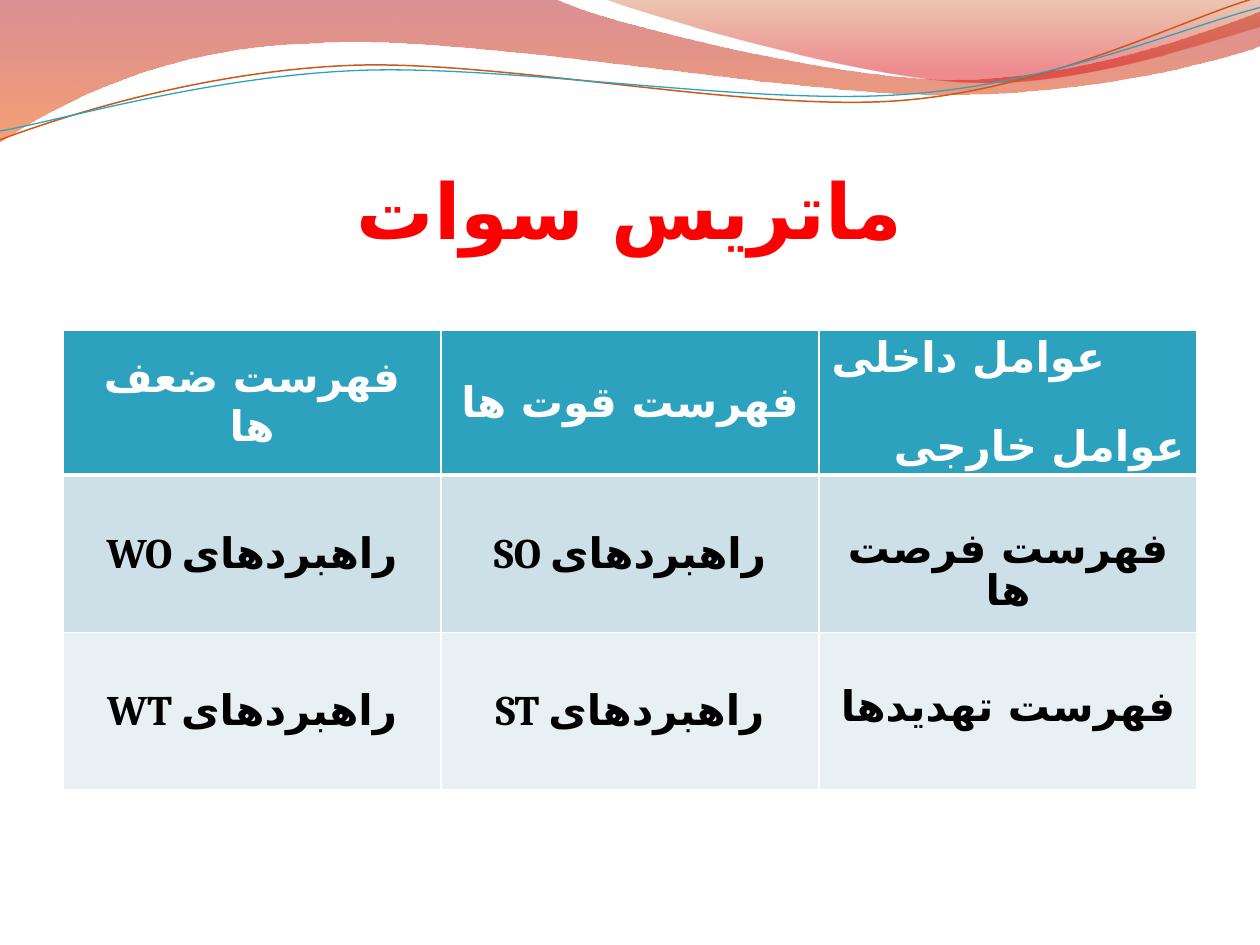
from lxml.etree import SubElement
from pptx import Presentation
from pptx.dml.color import RGBColor
from pptx.enum.text import MSO_ANCHOR, PP_ALIGN
from pptx.oxml import parse_xml
from pptx.oxml.ns import nsdecls, qn
from pptx.util import Inches, Pt

LEFT, MID, RIGHT = PP_ALIGN.LEFT, PP_ALIGN.CENTER, PP_ALIGN.RIGHT
WHITE, BLACK, RED, TEAL = "FFFFFF", "000000", "FF0000", "2DA2BF"
ARABIC = "DejaVu Sans"

BAND = [(0, 0), (4.4, -0.01),
        [(4.76, 0.17), (6.64, 0.63), (7.58, 0.63)],
        [(8.53, 0.63), (9.58, 0.26), (10, 0.09)],
        (10.01, 0.36),
        [(9.83, 0.44), (8.7, 0.76), (7.46, 0.75)],
        [(6.22, 0.75), (3.82, 0.28), (2.57, 0.34)],
        [(1.29, 0.36), (0.46, 0.83), (-0.01, 1.13)],
        (0, 0)]
CREST = [(4.79, -0.01),
         [(5.09, 0.11), (6.82, 0.62), (7.69, 0.65)],
         [(8.56, 0.69), (9.61, 0.32), (10, 0.21)],
         (10, 0), (4.79, -0.01)]
RUST = [(0, 1.11),
        [(0.48, 0.93), (1.58, 0.57), (2.77, 0.52)],
        [(3.95, 0.47), (5.93, 0.89), (7.13, 0.8)],
        [(8.33, 0.71), (9.38, 0.15), (9.98, -0.02)]]
AQUA = [(0, 1.04),
        [(0.47, 0.96), (1.64, 0.61), (2.83, 0.56)],
        [(4.03, 0.51), (5.97, 0.84), (7.17, 0.75)],
        [(8.36, 0.67), (9.41, 0.21), (10, 0.06)]]

ROWS = [["فهرست ضعف ها", "فهرست قوت ها", "عوامل داخلی\nعوامل خارجی"],
        ["WO راهبردهای", "SO راهبردهای", "فهرست فرصت ها"],
        ["WT راهبردهای", "ST راهبردهای", "فهرست تهدیدها"]]
FILLS = [TEAL, "CDE0E8", "E8F0F4"]
HIGHS = [1.15, 1.25, 1.25]


def paint(color, tone):
    color.rgb = RGBColor.from_string(tone)


def write(frame, text, size=24, font="Cambria", tone=BLACK,
          aligns=(MID,), gap=0, pitch=None):
    frame.word_wrap = True
    for i, line in enumerate(text.split("\n")):
        para = frame.paragraphs[0] if i == 0 else frame.add_paragraph()
        para.alignment = aligns[i]
        para.space_before = Pt(gap if i else 0)
        if pitch:
            para.line_spacing = Pt(pitch)
        run = para.add_run()
        run.text = line
        run.font.size = Pt(size)
        run.font.bold = True
        run.font.name = font
        paint(run.font.color, tone)
        SubElement(run.font._element, qn("a:cs"), typeface=ARABIC)


def bend(shape, parts):
    lines = iter(list(shape._element.iter(qn("a:lnTo"))))
    for part in parts[1:]:
        first = next(lines)
        if isinstance(part, tuple):
            continue
        curve = SubElement(first.getparent(), qn("a:cubicBezTo"))
        first.addprevious(curve)
        for line in (first, next(lines), next(lines)):
            curve.append(line[0])
            line.getparent().remove(line)


def outline(slide, parts, close):
    dots = []
    for part in parts:
        dots += [part] if isinstance(part, tuple) else part
    dots = [(Inches(x), Inches(y)) for x, y in dots]
    form = slide.shapes.build_freeform(*dots[0])
    form.add_line_segments(dots[1:], close=close)
    shape = form.convert_to_shape()
    bend(shape, parts)
    shape.shadow.inherit = False
    return shape


def wave(slide, parts, stops):
    shape = outline(slide, parts, True)
    shape.line.fill.background()
    shape.fill.gradient()
    shape.fill.gradient_angle = 270
    for stop, (place, tone, alpha) in zip(shape.fill.gradient_stops, stops):
        stop.position = place
        paint(stop.color, tone)
        node = stop._gs.find(qn("a:srgbClr"))
        SubElement(node, qn("a:alpha"), val=str(alpha * 1000))


def strand(slide, parts, tone, width):
    shape = outline(slide, parts, False)
    shape.fill.background()
    paint(shape.line.color, tone)
    shape.line.width = Pt(width)


def banner(slide):
    wave(slide, BAND, [(0, "AF0911", 45), (1, "EE5300", 55)])
    wave(slide, CREST, [(0, "C24400", 30), (0.8, "DC000B", 45)])
    strand(slide, RUST, "CF5818", 0.85)
    strand(slide, AQUA, TEAL, 0.75)


def title(slide, left, top, width, height):
    box = slide.shapes.add_textbox(Inches(left), Inches(top),
                                   Inches(width), Inches(height))
    frame = box.text_frame
    frame.margin_left = frame.margin_right = frame.margin_bottom = 0
    frame.vertical_anchor = MSO_ANCHOR.BOTTOM
    write(frame, "ماتریس سوات", size=44, font="Calibri", tone=RED)


def border(cell, row):
    widths = {"L": 1, "R": 1, "T": 3 if row == 1 else 1, "B": 1 if row else 3}
    props = cell._tc.get_or_add_tcPr()
    for i, (side, width) in enumerate(widths.items()):
        props.insert(i, parse_xml(
            f'<a:ln{side} {nsdecls("a")} w="{Pt(width)}"><a:solidFill>'
            f'<a:srgbClr val="{WHITE}"/></a:solidFill></a:ln{side}>'))


def matrix(slide, left, top, width):
    table = slide.shapes.add_table(3, 3, Inches(left), Inches(top), Inches(width),
                                   Inches(sum(HIGHS))).table
    for r, texts in enumerate(ROWS):
        table.rows[r].height = Inches(HIGHS[r])
        for c, text in enumerate(texts):
            cell = table.cell(r, c)
            cell.fill.solid()
            paint(cell.fill.fore_color, FILLS[r])
            border(cell, r)
            cell.vertical_anchor = MSO_ANCHOR.MIDDLE
            cell.margin_top = cell.margin_bottom = Inches(0.01)
            look = {"tone": BLACK if r else WHITE}
            if c == 2 and r == 0:
                look.update(aligns=(LEFT, RIGHT), gap=23)
            elif c == 2:
                cell.vertical_anchor = MSO_ANCHOR.TOP
                cell.margin_top = Inches(0.45)
                look.update(pitch=24)
            write(cell.text_frame, text, **look)


def main():
    deck = Presentation()
    deck.slide_width, deck.slide_height = Inches(10), Inches(7.5)
    slide = deck.slides.add_slide(deck.slide_layouts[6])
    banner(slide)
    title(slide, 0.5, 0.77, 9, 1.25)
    matrix(slide, 0.5, 2.62, 9)
    deck.save("out.pptx")


if __name__ == "__main__":
    main()
